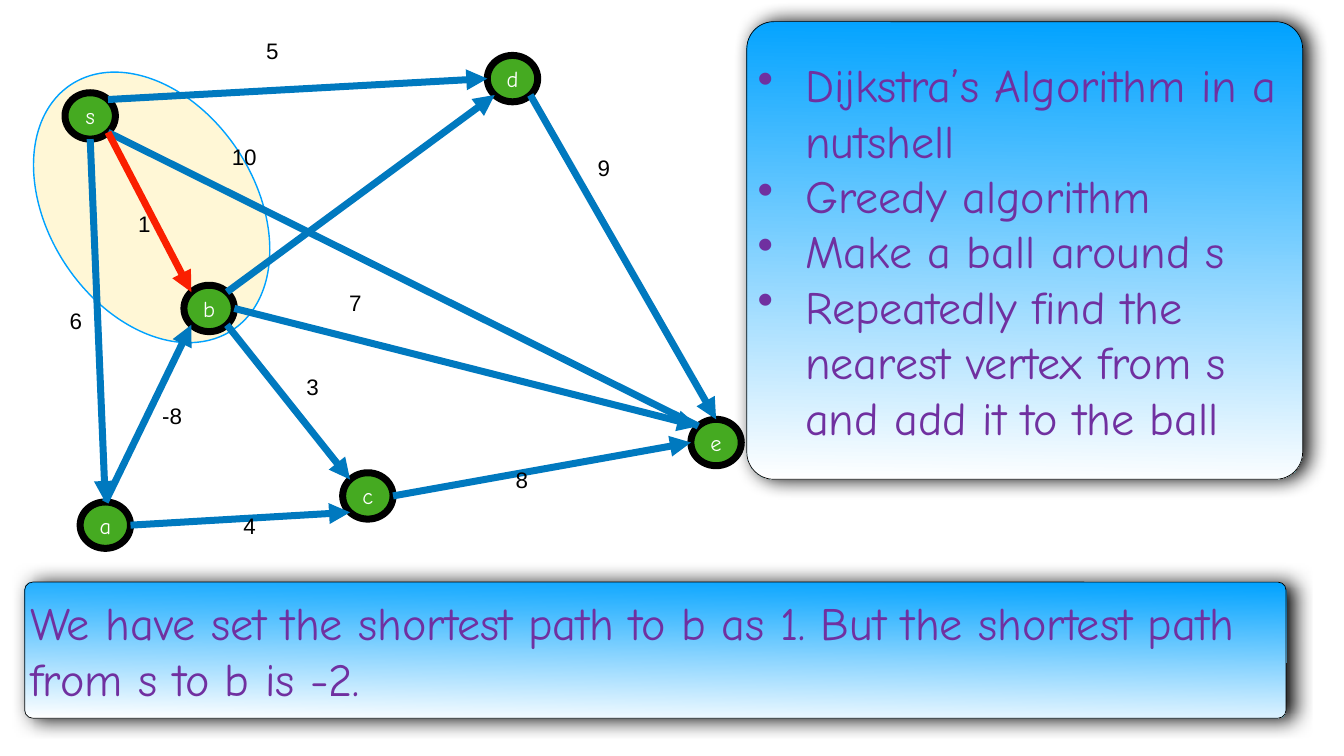
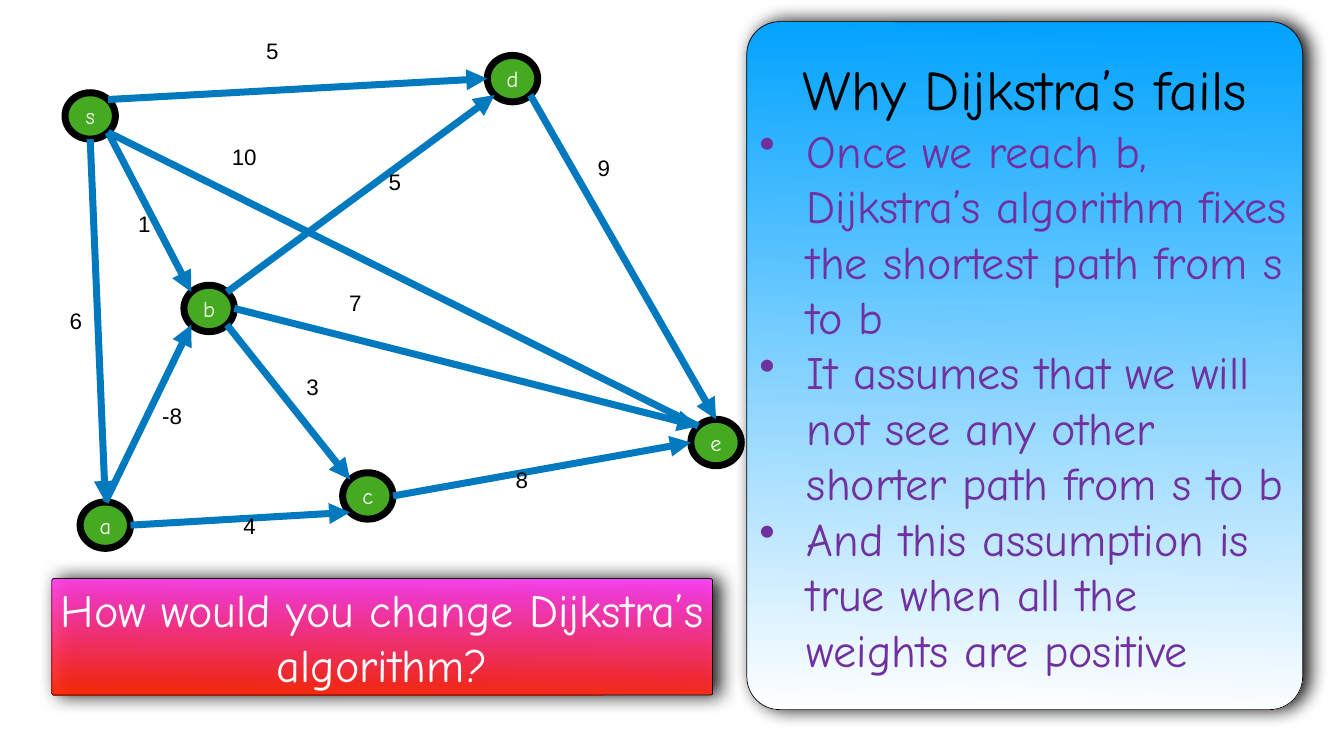
from dataclasses import dataclass
from math import sqrt
from lxml.etree import SubElement
from pptx import Presentation
from pptx.dml.color import RGBColor
from pptx.enum.shapes import MSO_CONNECTOR, MSO_SHAPE
from pptx.enum.text import MSO_ANCHOR, PP_ALIGN
from pptx.oxml.ns import qn
from pptx.util import Pt

SCALE = 9144  # EMU per px, 100 px to the inch


@dataclass(frozen=True)
class Theme:
    black: str = "000000"
    white: str = "FFFFFF"
    green: str = "45AA21"
    blue: str = "0079BF"
    red: str = "FA1F00"
    cream: str = "FFF7D6"
    sky: str = "00A2FF"
    purple: str = "7030A0"
    pink: str = "FF40FF"
    flame: str = "FF2600"
    hand: str = "Comic Neue"
    plain: str = "Arial"
    small: int = 32
    body: int = 66
    head: int = 80
    thick: int = 10
    pad: int = 6
    hang: int = 94


# The graph: node corners, edges between compass points, weight labels
NODE_W, NODE_H = 100, 92
NODES = {"s": (129, 184), "d": (967, 110), "b": (365, 566),
         "a": (159, 996), "c": (680, 938), "e": (1371, 832)}
DIAG = 1 / sqrt(2)
SITES = {"N": (0, -1), "E": (1, 0), "S": (0, 1), "W": (-1, 0),
         "NE": (DIAG, -DIAG), "SE": (DIAG, DIAG),
         "SW": (-DIAG, DIAG), "NW": (-DIAG, -DIAG)}
EDGES = ["d SE e N", "s SE e NW", "b NE d SW", "a N b SW", "b SE c NW",
         "c E e W", "s SE b NW", "s NE d W", "s S a N", "a E c SW", "b E e NW"]
BARE = "s SE e NW"  # drawn without an arrowhead
LABELS = [("5", 522, 43), ("6", 132, 578), ("10", 454, 253), ("9", 1180, 275),
          ("1", 268, 385), ("4", 477, 984), ("3", 602, 709), ("-8", 316, 767),
          ("7", 687, 542), ("8", 1017, 894)]


def px(num):
    return round(num * SCALE)


def rgb(code):
    return RGBColor.from_string(code)


class Deck:
    def __init__(self, theme):
        self.theme = theme
        self.prs = Presentation()
        self.prs.slide_width, self.prs.slide_height = px(2667), px(1500)
        self.slide = None

    def page(self):
        self.slide = self.prs.slides.add_slide(self.prs.slide_layouts[6])

    def shape(self, kind, box, line, width):
        item = self.slide.shapes.add_shape(kind, *map(px, box))
        item.shadow.inherit = False
        item.line.color.rgb = rgb(line)
        item.line.width = Pt(width)
        return item

    def frame(self, item):
        frame = item.text_frame
        frame.word_wrap = True
        frame.vertical_anchor = MSO_ANCHOR.MIDDLE
        frame.margin_left = frame.margin_right = px(self.theme.pad)
        frame.margin_top = frame.margin_bottom = px(self.theme.pad)
        return frame

    def say(self, para, text, size, color, font, align=PP_ALIGN.LEFT):
        para.alignment = align
        run = para.add_run()
        run.text = text
        run.font.size = Pt(size)
        run.font.name = font
        run.font.color.rgb = rgb(color)

    def bullet(self, para):
        props = para._p.get_or_add_pPr()
        props.set("marL", str(px(self.theme.hang)))
        props.set("indent", str(-px(self.theme.hang)))
        SubElement(props, qn("a:buChar")).set("char", "•")

    def ball(self, box, turn):
        item = self.shape(MSO_SHAPE.OVAL, box, self.theme.sky, 2)
        item.fill.solid()
        item.fill.fore_color.rgb = rgb(self.theme.cream)
        item.rotation = turn

    def node(self, name, left, top):
        t = self.theme
        item = self.shape(MSO_SHAPE.OVAL, (left, top, NODE_W, NODE_H), t.black, t.thick)
        item.fill.solid()
        item.fill.fore_color.rgb = rgb(t.green)
        self.say(self.frame(item).paragraphs[0], name, t.small, t.white,
                 t.hand, PP_ALIGN.CENTER)

    def site(self, name, side):
        left, top = NODES[name]
        dx, dy = SITES[side]
        return px(left + NODE_W / 2 * (1 + dx)), px(top + NODE_H / 2 * (1 + dy))

    def edge(self, route, color):
        tail, out, tip, into = route.split()
        line = self.slide.shapes.add_connector(
            MSO_CONNECTOR.STRAIGHT, *self.site(tail, out), *self.site(tip, into))
        line.line.color.rgb = rgb(color)
        line.line.width = Pt(self.theme.thick)
        if route != BARE:
            SubElement(line.line._get_or_add_ln(), qn("a:tailEnd")).set("type", "triangle")
        SubElement(line._element.spPr, qn("a:effectLst"))

    def label(self, text, left, top):
        t = self.theme
        wide = 70 if len(text) > 1 else 54
        item = self.slide.shapes.add_textbox(*map(px, (left, top, wide, 123)))
        para = self.frame(item).paragraphs[0]
        para.line_spacing = 0.9
        self.say(para, text, t.small, t.black, t.plain)

    def graph(self, hot=None):
        for name, spot in NODES.items():
            self.node(name, *spot)
        for route in EDGES:
            self.edge(route, self.theme.red if route == hot else self.theme.blue)
        for weight in LABELS:
            self.label(*weight)

    def shade(self, item):
        effects = item._element.spPr.find(qn("a:effectLst"))
        cast = SubElement(effects, qn("a:outerShdw"), blurRad=str(Pt(28)),
                          dist=str(Pt(9)), dir="0", rotWithShape="0")
        color = SubElement(cast, qn("a:srgbClr"), val=self.theme.black)
        SubElement(color, qn("a:alpha"), val="97000")

    def panel(self, box, colors, curve=0.059, alpha=None):
        item = self.shape(MSO_SHAPE.ROUNDED_RECTANGLE, box, self.theme.black, 1)
        item.adjustments[0] = curve
        item.fill.gradient()
        item.fill.gradient_angle = 269
        for stop, color, place in zip(item.fill.gradient_stops, colors, (0, 1)):
            stop.color.rgb = rgb(color)
            stop.position = place
        if alpha:
            for color in list(item._element.spPr.iter(qn("a:srgbClr"))):
                SubElement(color, qn("a:alpha"), val=str(alpha * 1000))
        self.shade(item)
        return self.frame(item)

    def points(self, frame, lines, title=None):
        t = self.theme
        para = frame.paragraphs[0]
        if title:
            self.say(para, title, t.head, t.black, t.hand, PP_ALIGN.CENTER)
            para = frame.add_paragraph()
        for num, text in enumerate(lines):
            if num:
                para = frame.add_paragraph()
            self.bullet(para)
            self.say(para, text, t.body, t.purple, t.hand)


def main():
    t = Theme()
    deck = Deck(t)
    cool, warm = (t.sky, t.white), (t.pink, t.flame)

    # Slide 1: the algorithm and the ball around s
    deck.page()
    deck.ball((96, 120, 410, 583), 326.7)
    deck.graph(hot="s SE b NW")
    deck.points(deck.panel((1482, 43, 1103, 908), cool), [
        "Dijkstra’s Algorithm in a nutshell",
        "Greedy algorithm",
        "Make a ball around s",
        "Repeatedly find the nearest vertex from s and add it to the ball"])
    note = deck.panel((49, 1155, 2503, 270), cool)
    deck.say(note.paragraphs[0],
             "We have set the shortest path to b as 1. "
             "But the shortest path from s to b is -2.",
             t.body, t.purple, t.hand)

    # Slide 2: why it fails
    deck.page()
    deck.graph()
    deck.points(deck.panel((1482, 43, 1103, 1365), cool), [
        "Once we reach b, Dijkstra’s algorithm fixes the shortest path from s to b",
        "It assumes that we will not see any other shorter path from s to b",
        "And this assumption is true when all the weights are positive"],
        title="Why Dijkstra’s fails")
    ask = deck.panel((103, 1148, 1311, 231), warm, curve=0.017, alpha=93)
    deck.say(ask.paragraphs[0], "How would you change Dijkstra’s algorithm?",
             t.body, t.white, t.hand, PP_ALIGN.CENTER)
    deck.label("5", 765, 302)

    deck.prs.save("out.pptx")


if __name__ == "__main__":
    main()
